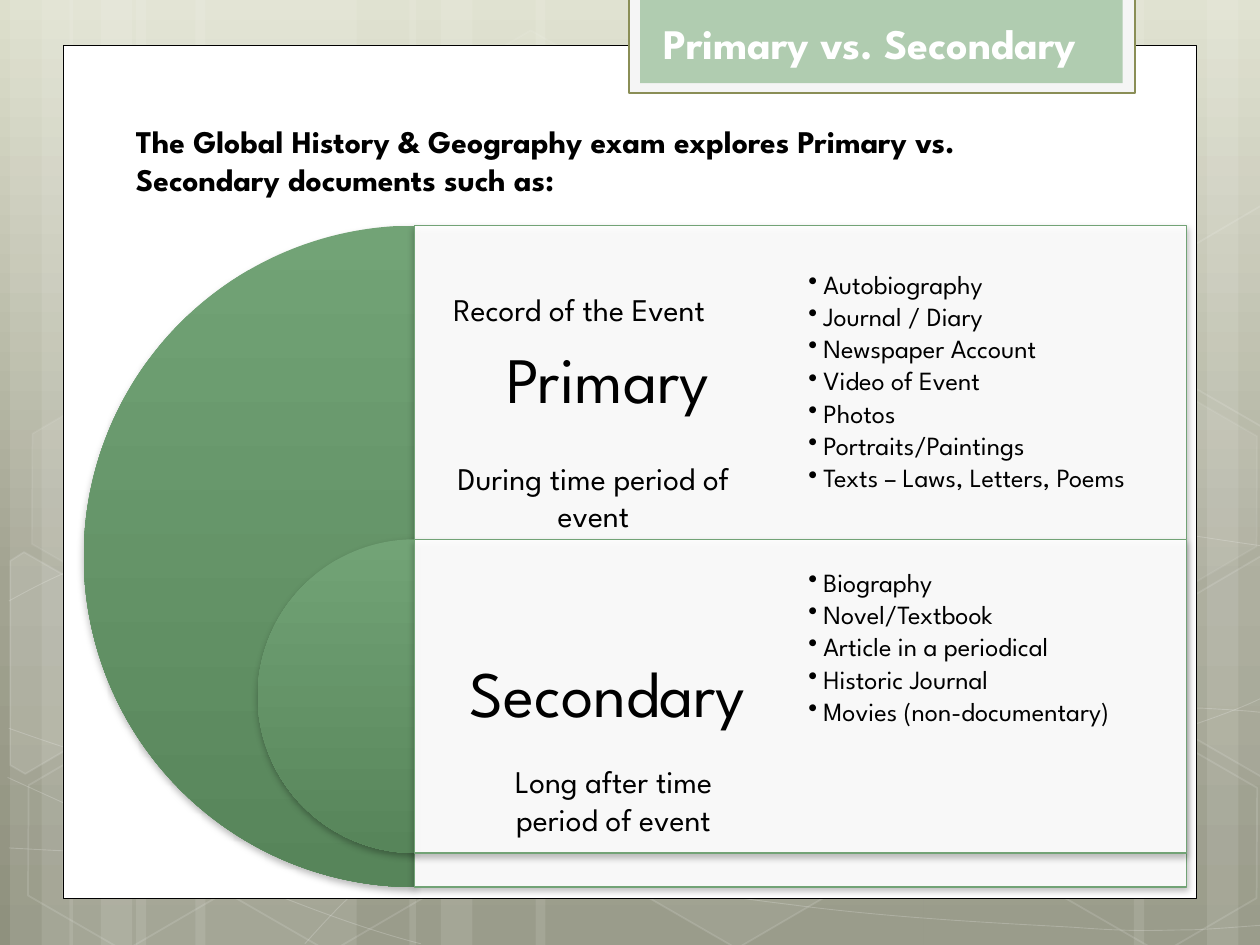
import copy
import math
from dataclasses import dataclass

import pptx
import pptx.util
from lxml import etree
from pptx.dml.color import RGBColor
from pptx.enum.shapes import MSO_SHAPE
from pptx.enum.text import MSO_ANCHOR, PP_ALIGN
from pptx.oxml.ns import qn
from pptx.util import Inches, Pt


@dataclass(frozen=True)
class Theme:
    font: str = "League Spartan"
    white: str = "FFFFFF"
    black: str = "000000"
    frame: str = "F5F5F5"
    olive: str = "8A8E56"
    mint: str = "B0CCB0"
    green: str = "72A376"
    dark_green: str = "57855A"
    backdrop: tuple = ((0, "DDDFCC"), (0.62, "A2A391"), (1, "8F917E"))
    title: float = 24
    body: float = 18
    label: float = 37
    item: float = 15


@dataclass(frozen=True)
class Box:
    left: float
    top: float
    width: float
    height: float

    def inches(self):
        return [Inches(v) for v in (self.left, self.top, self.width, self.height)]


THEME = Theme()
PAGE = Box(0, 0, 10, 7.5)


def set_opacity(color, percent):
    if percent < 100:
        etree.SubElement(color, qn("a:alpha"), val=str(percent * 1000))


def paint(shape, fill=None, opacity=100, line=None, width=1, line_opacity=100):
    shape.shadow.inherit = False
    properties = shape._element.spPr
    if fill:
        shape.fill.solid()
        shape.fill.fore_color.rgb = RGBColor.from_string(fill)
        set_opacity(properties.find(f"{qn('a:solidFill')}/{qn('a:srgbClr')}"), opacity)
    else:
        shape.fill.background()
    if line:
        shape.line.color.rgb = RGBColor.from_string(line)
        shape.line.width = Pt(width)
        outline = properties.find(qn("a:ln"))
        set_opacity(outline.find(f"{qn('a:solidFill')}/{qn('a:srgbClr')}"), line_opacity)
    else:
        shape.line.fill.background()
    return shape


def add_preset(slide, kind, box, **style):
    return paint(slide.shapes.add_shape(kind, *box.inches()), **style)


def fill_gradient(fill, owner, stops):
    """Fill from top to bottom with (position, colour) stops."""
    fill.gradient()
    fill.gradient_angle = 270
    stop_list = next(owner.iter(qn("a:gsLst")))
    while len(stop_list) < len(stops):
        stop_list.append(copy.deepcopy(stop_list[-1]))
    for stop, (position, color) in zip(fill.gradient_stops, stops):
        stop.position = position
        stop.color.rgb = RGBColor.from_string(color)


def cast_shadow(shape):
    effects = shape._element.spPr.find(qn("a:effectLst"))
    shadow = etree.SubElement(effects, qn("a:outerShdw"), blurRad=str(Pt(4)),
                              dist=str(Pt(2)), dir="5400000", rotWithShape="0")
    set_opacity(etree.SubElement(shadow, qn("a:srgbClr"), val=THEME.black), 28)


def add_text(slide, box, text, size, color=THEME.black, bold=False,
             align=PP_ALIGN.LEFT, inset=None, anchor=MSO_ANCHOR.TOP):
    frame = slide.shapes.add_textbox(*box.inches()).text_frame
    frame.word_wrap = True
    frame.vertical_anchor = anchor
    if inset is not None:
        frame.margin_left = frame.margin_right = Inches(inset)
        frame.margin_top = frame.margin_bottom = Inches(inset)
    frame.text = text
    for paragraph in frame.paragraphs:
        paragraph.alignment = align
        for run in paragraph.runs:
            run.font.name, run.font.size, run.font.bold = THEME.font, Pt(size), bold
            run.font.color.rgb = RGBColor.from_string(color)
    return frame


def draw_outline(slide, points, closed, **style):
    scaled = [(Inches(x), Inches(y)) for x, y in points]
    builder = slide.shapes.build_freeform(*scaled[0])
    builder.add_line_segments(scaled[1:], close=closed)
    return paint(builder.convert_to_shape(), **style)


def draw_curve(slide, knots, straight=None):
    """Joined cubic curves, three knots each; straight is the knot ending a line."""
    curve = draw_outline(slide, knots, False, line=THEME.white, width=0.5,
                         line_opacity=20)
    segments = list(curve._element.iter(qn("a:lnTo")))
    if straight is not None:
        del segments[straight - 1]
    for i in range(0, len(segments), 3):
        bezier = etree.Element(qn("a:cubicBezTo"))
        segments[i].addprevious(bezier)
        for segment in segments[i:i + 3]:
            bezier.append(segment[0])
            segment.getparent().remove(segment)


def draw_tilted(slide, corners, center, **style):
    """Closed outline whose frame is turned 30 degrees about its centre."""
    cos, sin = math.cos(math.radians(30)), math.sin(math.radians(30))
    offsets = [(x - center[0], y - center[1]) for x, y in corners]
    upright = [(center[0] + x * cos + y * sin, center[1] - x * sin + y * cos)
               for x, y in offsets]
    draw_outline(slide, upright, True, **style).rotation = 30


def draw_backdrop(slide, box):
    """Gradient page with translucent stripes, thin curves and hexagons."""
    fill_gradient(slide.background.fill, slide._element, THEME.backdrop)
    stripes = [(1.08, 1.75), (0.08, 0.5), (0.33, 0.83), (1.55, 1.75), (0.55, 0.5),
               (0.8, 0.83), (7.33, 1.75), (9.58, 0.5), (9, 0.83), (4.25, 3.08),
               (3.25, 0.5), (3.5, 0.83)]
    for x, width in stripes:
        add_preset(slide, MSO_SHAPE.RECTANGLE,
                   Box(box.left + x, box.top, width, box.height),
                   fill=THEME.white, opacity=10)

    curves = [
        ([(0.07, 6.73), (0.61, 6.76), (1.15, 6.79), (1.9, 6.78), (2.65, 6.77),
          (3.58, 6.75), (4.58, 6.65), (5.58, 6.55), (7, 6.36), (7.92, 6.17),
          (8.83, 5.98), (9.77, 5.68), (10.07, 5.51)], None),
        ([(0.07, 4.77), (0.36, 4.61), (0.65, 4.46), (1.21, 4.31), (1.78, 4.16),
          (2.59, 3.94), (3.47, 3.87), (4.36, 3.8), (5.44, 3.79), (6.54, 3.87),
          (7.64, 3.95), (9.47, 4.26), (10.07, 4.34)], None),
        ([(0.06, 6.17), (1.27, 6.72), (2.47, 7.27), (3.34, 7.49)], None),
        ([(0.07, 5.78), (0.38, 5.89), (0.7, 6), (1.28, 6.16), (1.86, 6.31),
          (2.73, 6.56), (3.57, 6.73), (4.4, 6.9), (5.45, 7.08), (6.28, 7.18),
          (7.11, 7.29), (8, 7.33), (8.53, 7.36), (9.05, 7.4), (9.19, 7.38),
          (9.45, 7.38), (9.71, 7.37), (9.89, 7.35), (10.07, 7.34)], None),
        ([(2.42, 7.49), (2.6, 7.29), (2.78, 7.09), (3.02, 6.91), (3.26, 6.73),
          (3.6, 6.53), (3.88, 6.39), (4.16, 6.25), (4.33, 6.19), (4.7, 6.09),
          (5.06, 5.99), (5.73, 5.85), (6.08, 5.78), (6.44, 5.71), (6.49, 5.71),
          (6.8, 5.69), (7.11, 5.66), (7.6, 5.63), (7.94, 5.62), (8.29, 5.61),
          (8.86, 5.62), (8.86, 5.62), (9.53, 5.62), (9.71, 5.63), (9.88, 5.64),
          (9.97, 5.65), (10.06, 5.66), (10.03, 5.65), (10.06, 5.66)], 22),
    ]
    for knots, straight in curves:
        draw_curve(slide, [(box.left + x, box.top + y) for x, y in knots], straight)

    hexagons = [(3.34, 0.36, 4, 8), (4.97, 5.89, 6, 12), (0.11, 5.91, 0, 12),
                (0.14, 3.12, 7, 8), (1.74, 5.92, 0, 12), (7.53, 4.53, 10, 12),
                (8.34, 5.93, 0, 12), (8.34, 3.14, 7, 8)]
    for x, y, opacity, line_opacity in hexagons:
        hexagon = add_preset(slide, MSO_SHAPE.HEXAGON,
                             Box(box.left + x, box.top + y, 1.75, 1.52),
                             fill=THEME.white if opacity else None, opacity=opacity,
                             line=THEME.white, line_opacity=line_opacity)
        hexagon.adjustments[0] = 0.285
        hexagon.rotation = 30

    left_edge = [(0.08, 4.45), (0.19, 4.38), (0.96, 4.82), (0.95, 5.7), (0.2, 6.14),
                 (0.08, 6.07), (0.08, 4.45)]
    right_edge = [(9.26, 2.07), (10.01, 1.63), (10.1, 1.68), (10.09, 3.35),
                  (10.02, 3.39), (9.26, 2.95), (9.26, 2.07)]
    for corners, center, drop, opacity in ((left_edge, (0.36, 5.35), 0, 10),
                                           (right_edge, (9.85, 2.41), 2.78, 4),
                                           (right_edge, (9.85, 2.41), 0, 0)):
        points = [(box.left + x, box.top + y + drop) for x, y in corners]
        draw_tilted(slide, points, (box.left + center[0], box.top + center[1] + drop),
                    fill=THEME.white if opacity else None, opacity=opacity,
                    line=THEME.white, line_opacity=12)


def draw_title_tab(slide, box):
    add_preset(slide, MSO_SHAPE.RECTANGLE, box, fill=THEME.frame, line=THEME.olive,
               width=1.25)
    add_preset(slide, MSO_SHAPE.RECTANGLE,
               Box(box.left + 0.09, box.top, box.width - 0.19, box.height - 0.08),
               fill=THEME.mint)
    add_text(slide, Box(box.left + 0.18, box.top + 0.11, 3.81, 0.5),
             "Primary vs. Secondary", THEME.title, THEME.white, bold=True)


def draw_source_type(slide, box, row_height, label, examples, lift=0):
    """Half disc and panel; lift raises the examples above the row's middle."""
    disc = add_preset(slide, MSO_SHAPE.PIE,
                      Box(box.left - box.height / 2, box.top, box.height, box.height))
    disc.adjustments[0], disc.adjustments[1] = 54, 162
    fill_gradient(disc.fill, disc._element, ((0, THEME.green), (1, THEME.dark_green)))
    panel = add_preset(slide, MSO_SHAPE.RECTANGLE, box, fill=THEME.white, opacity=90,
                       line=THEME.green, width=0.75)
    for part in (disc, panel):
        cast_shadow(part)

    half = box.width / 2
    name = add_text(slide, Box(box.left, box.top, half, row_height), label, THEME.label,
                    align=PP_ALIGN.CENTER, inset=0.15, anchor=MSO_ANCHOR.MIDDLE)
    name.paragraphs[0].line_spacing = 0.9
    name.paragraphs[0].space_after = Pt(13)

    listing = add_text(slide, Box(box.left + half, box.top, half, row_height),
                       "\n".join(examples), THEME.item, inset=0.06,
                       anchor=MSO_ANCHOR.MIDDLE)
    listing.margin_bottom = Inches(0.06 + 2 * lift)
    for paragraph in listing.paragraphs:
        paragraph.line_spacing = 0.9
        paragraph.space_after = Pt(2.25)
        properties = paragraph._p.get_or_add_pPr()
        properties.set("marL", str(Inches(0.12)))
        properties.set("indent", str(Inches(-0.12)))
        etree.SubElement(properties, qn("a:buChar"), char="•")


def draw_comparison(slide, box):
    row = 2.49
    draw_source_type(slide, box, row, "Primary",
                     ["Autobiography", "Journal / Diary", "Newspaper Account",
                      "Video of Event", "Photos", "Portraits/Paintings",
                      "Texts – Laws, Letters, Poems"])
    draw_source_type(slide, Box(box.left, box.top + row, box.width, row), row,
                     "Secondary",
                     ["Biography", "Novel/Textbook", "Article in a periodical",
                      "Historic Journal", "Movies (non-documentary)"], lift=0.38)
    remarks = [(0.21, 1.8, 2.42, 0.71, "During time period of event", PP_ALIGN.CENTER),
               (0.37, 4.21, 2.42, 0.71, "Long after time period of event",
                PP_ALIGN.CENTER),
               (0.21, 0.46, 2.83, 0.4, "Record of the Event", PP_ALIGN.LEFT)]
    for x, y, width, height, remark, align in remarks:
        add_text(slide, Box(box.left + x, box.top + y, width, height), remark,
                 THEME.body, align=align)


def main():
    deck = pptx.Presentation()
    deck.slide_width, deck.slide_height = Inches(PAGE.width), Inches(PAGE.height)
    slide = deck.slides.add_slide(deck.slide_layouts[6])
    draw_backdrop(slide, PAGE)
    add_preset(slide, MSO_SHAPE.RECTANGLE, Box(0.5, 0.36, 9, 6.77), fill=THEME.white,
               line=THEME.black, width=0.5)
    draw_title_tab(slide, Box(4.99, -0.02, 4.02, 0.76))
    add_text(slide, Box(0.98, 0.92, 7.46, 0.71),
             "The Global History & Geography exam explores Primary vs. \v"
             "Secondary documents such as:", THEME.body, bold=True)
    draw_comparison(slide, Box(3.29, 1.79, 6.13, 5.25))
    deck.save("out.pptx")


if __name__ == "__main__":
    main()
